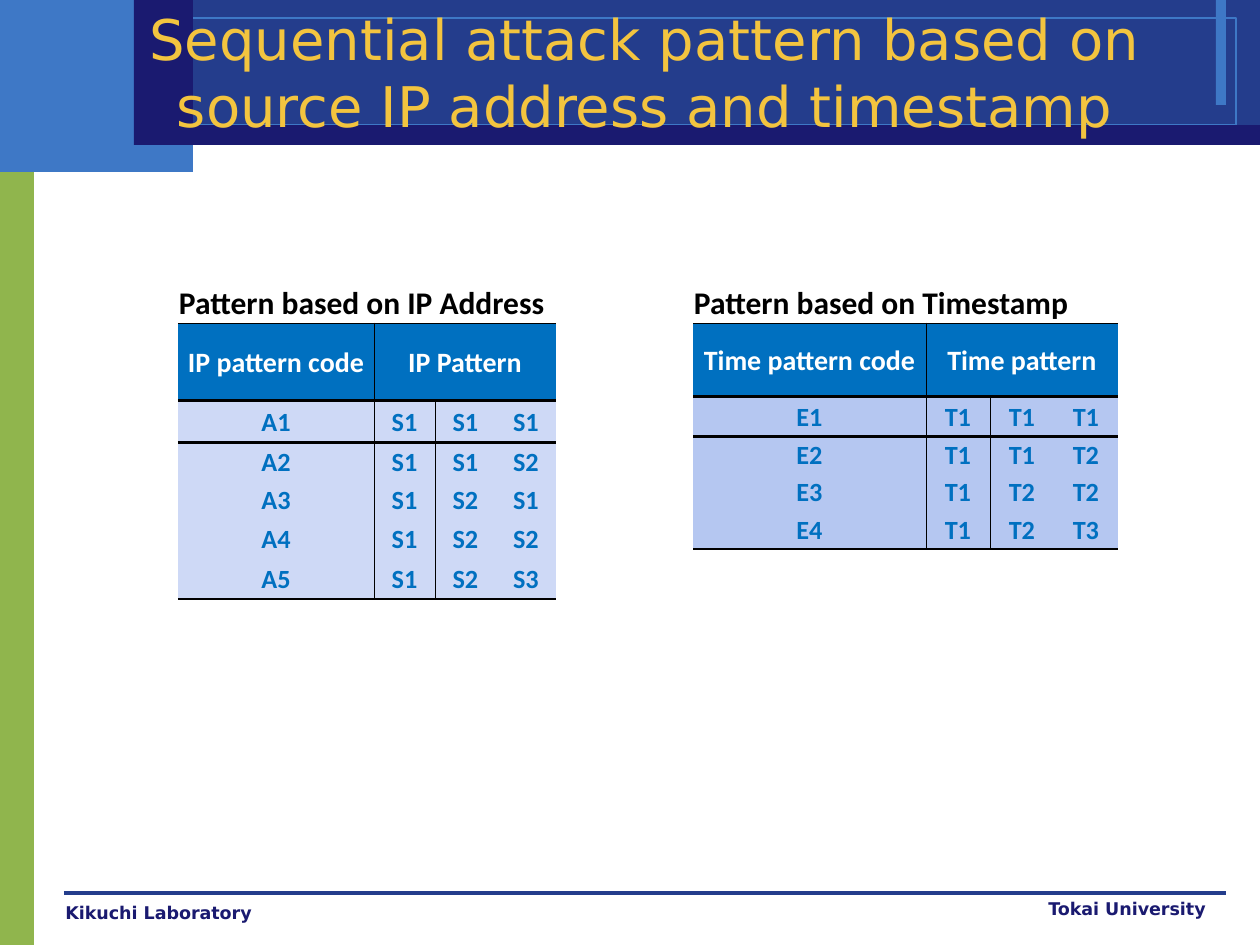
"""Build the slide on sequential attack patterns by IP address and timestamp."""
from dataclasses import dataclass
from typing import Optional

from lxml.etree import SubElement
from pptx import Presentation
from pptx.dml.color import RGBColor
from pptx.enum.shapes import MSO_CONNECTOR, MSO_SHAPE
from pptx.enum.text import MSO_ANCHOR, MSO_AUTO_SIZE, PP_ALIGN
from pptx.oxml import parse_xml
from pptx.oxml.ns import nsdecls, qn
from pptx.util import Emu, Pt

PX = 914400 / 126
COLORS = {
    "green": "90B54D", "blue": "3E78C6", "band": "243D8C", "navy": "1A1A70",
    "gold": "F3C43F", "header": "0070C0", "pale": "CED9F6", "soft": "B5C7F1",
    "black": "000000", "white": "FFFFFF",
}
SANS, TABLE_FONT = "DejaVu Sans", "Calibri"
NO_STYLE = "{2D5ABB26-0587-4C30-8999-92F81FD0307C}"


@dataclass
class Bar:
    x: int
    y: int
    w: int
    h: int
    fill: Optional[str] = None
    line: Optional[str] = None


@dataclass
class Footer:
    text: str
    x: int
    y: int
    w: int
    align: PP_ALIGN


@dataclass
class PatternTable:
    x: int
    cols: list[int]
    rows: list[int]
    fill: str
    title: str
    heads: tuple[str, str]
    prefix: str
    patterns: list[str]


BARS = [
    Bar(0, 135, 34, 810, "green"),
    Bar(0, 0, 193, 172, "blue"),
    Bar(193, 0, 1067, 145, "band"),
    Bar(1216, 0, 10, 105, "blue"),
    Bar(25, 18, 1211, 107, line="blue"),
    Bar(164, 125, 1096, 20, "navy"),
    Bar(134, 0, 59, 145, "navy"),
]
FOOTERS = [
    Footer("Kikuchi Laboratory", 53, 896, 346, PP_ALIGN.LEFT),
    Footer("Tokai University", 966, 892, 252, PP_ALIGN.RIGHT),
]
TABLES = [
    PatternTable(178, [196, 61, 61, 60], [40, 78, 42, 38, 38, 40, 40], "pale",
                 "Pattern based on IP Address", ("IP pattern code", "IP Pattern"), "A",
                 ["S1 S1 S1", "S1 S1 S2", "S1 S2 S1", "S1 S2 S2", "S1 S2 S3"]),
    PatternTable(693, [233, 64, 64, 64], [40, 74, 40, 37, 37, 38], "soft",
                 "Pattern based on Timestamp", ("Time pattern code", "Time pattern"), "E",
                 ["T1 T1 T1", "T1 T1 T2", "T1 T2 T2", "T1 T2 T3"]),
]


def px(n: int) -> Emu:
    return Emu(round(n * PX))


def rgb(name: str) -> RGBColor:
    return RGBColor.from_string(COLORS[name])


def style(p, font: str, size: int, color: str, bold: bool, align: PP_ALIGN) -> None:
    p.alignment = align
    p.font.name, p.font.size, p.font.bold = font, Pt(size), bold
    p.font.color.rgb = rgb(color)


def draw_bar(s, bar: Bar) -> None:
    sp = s.shapes.add_shape(MSO_SHAPE.RECTANGLE, px(bar.x), px(bar.y), px(bar.w), px(bar.h))
    sp.shadow.inherit = False
    if bar.fill:
        sp.fill.solid()
        sp.fill.fore_color.rgb = rgb(bar.fill)
    else:
        sp.fill.background()
    if bar.line:
        sp.line.color.rgb = rgb(bar.line)
        sp.line.width = Pt(0)
    else:
        sp.line.fill.background()


def draw_rule(s) -> None:
    rule = s.shapes.add_connector(MSO_CONNECTOR.STRAIGHT, px(64), px(893), px(1226), px(893))
    rule.line.color.rgb = rgb("band")
    rule.line.width = Pt(0)
    SubElement(rule.element.spPr, qn("a:effectLst"))


def draw_footer(s, footer: Footer) -> None:
    sp = s.shapes.add_textbox(px(footer.x), px(footer.y), px(footer.w), px(32))
    tf = sp.text_frame
    tf.word_wrap = True
    tf.text = footer.text
    style(tf.paragraphs[0], SANS, 10, "navy", True, footer.align)


def draw_title(s, text: str) -> None:
    sp = s.shapes.title
    sp.left, sp.top, sp.width, sp.height = px(103), px(33), px(1084), px(78)
    tf = sp.text_frame
    tf.text = text
    tf.word_wrap = True
    tf.auto_size = MSO_AUTO_SIZE.NONE
    tf.vertical_anchor = MSO_ANCHOR.MIDDLE
    style(tf.paragraphs[0], SANS, 32, "gold", False, PP_ALIGN.CENTER)
    sp.element.getparent().append(sp.element)


def set_borders(cell, widths: dict[str, Optional[float]]) -> None:
    tc_pr = cell._tc.get_or_add_tcPr()
    sides = [side for side in ("L", "R", "T", "B") if widths.get(side)]
    for i, side in enumerate(sides):
        tc_pr.insert(i, parse_xml(
            f'<a:ln{side} {nsdecls("a")} w="{Pt(widths[side])}"><a:solidFill>'
            f'<a:srgbClr val="{COLORS["black"]}"/></a:solidFill></a:ln{side}>'))


def draw_table(s, t: PatternTable) -> None:
    grid = [[t.title, "", "", ""], [*t.heads, "", ""]]
    grid += [[f"{t.prefix}{i}", *row.split()] for i, row in enumerate(t.patterns, 1)]
    frame = s.shapes.add_table(len(grid), 4, px(t.x), px(283), px(sum(t.cols)), px(sum(t.rows)))
    table = frame.table
    table.first_row = table.horz_banding = False
    table._tbl.tblPr.find(qn("a:tableStyleId")).text = NO_STYLE
    for col, width in zip(table.columns, t.cols):
        col.width = px(width)
    for row, height in zip(table.rows, t.rows):
        row.height = px(height)
    table.cell(0, 0).merge(table.cell(0, 3))
    table.cell(1, 1).merge(table.cell(1, 3))
    rules = {1: 0.5, 2: 2, len(grid): 1}
    looks = [(None, 18, "black"), ("header", 16, "white")]
    for r, texts in enumerate(grid):
        fill, size, color = looks[r] if r < 2 else (t.fill, 15, "header")
        for c, text in enumerate(texts):
            cell = table.cell(r, c)
            cell.margin_left = cell.margin_right = cell.margin_top = px(1)
            cell.margin_bottom = 0
            cell.vertical_anchor = MSO_ANCHOR.MIDDLE if r else MSO_ANCHOR.BOTTOM
            if fill:
                cell.fill.solid()
                cell.fill.fore_color.rgb = rgb(fill)
            else:
                cell.fill.background()
            set_borders(cell, {"L": 0.5 if r and c == 1 else None,
                               "R": 0.5 if r and c == 0 else None,
                               "T": rules.get(r), "B": rules.get(r + 1)})
            if text:
                cell.text = text
                style(cell.text_frame.paragraphs[0], TABLE_FONT, size, color, True,
                      PP_ALIGN.CENTER if r else PP_ALIGN.LEFT)


def main() -> None:
    prs = Presentation()
    prs.slide_width, prs.slide_height = px(1260), px(945)
    s = prs.slides.add_slide(prs.slide_layouts[5])
    for bar in BARS:
        draw_bar(s, bar)
    draw_rule(s)
    for footer in FOOTERS:
        draw_footer(s, footer)
    draw_title(s, "Sequential attack pattern based on source IP address and timestamp")
    for table in TABLES:
        draw_table(s, table)
    prs.save("out.pptx")


if __name__ == "__main__":
    main()
